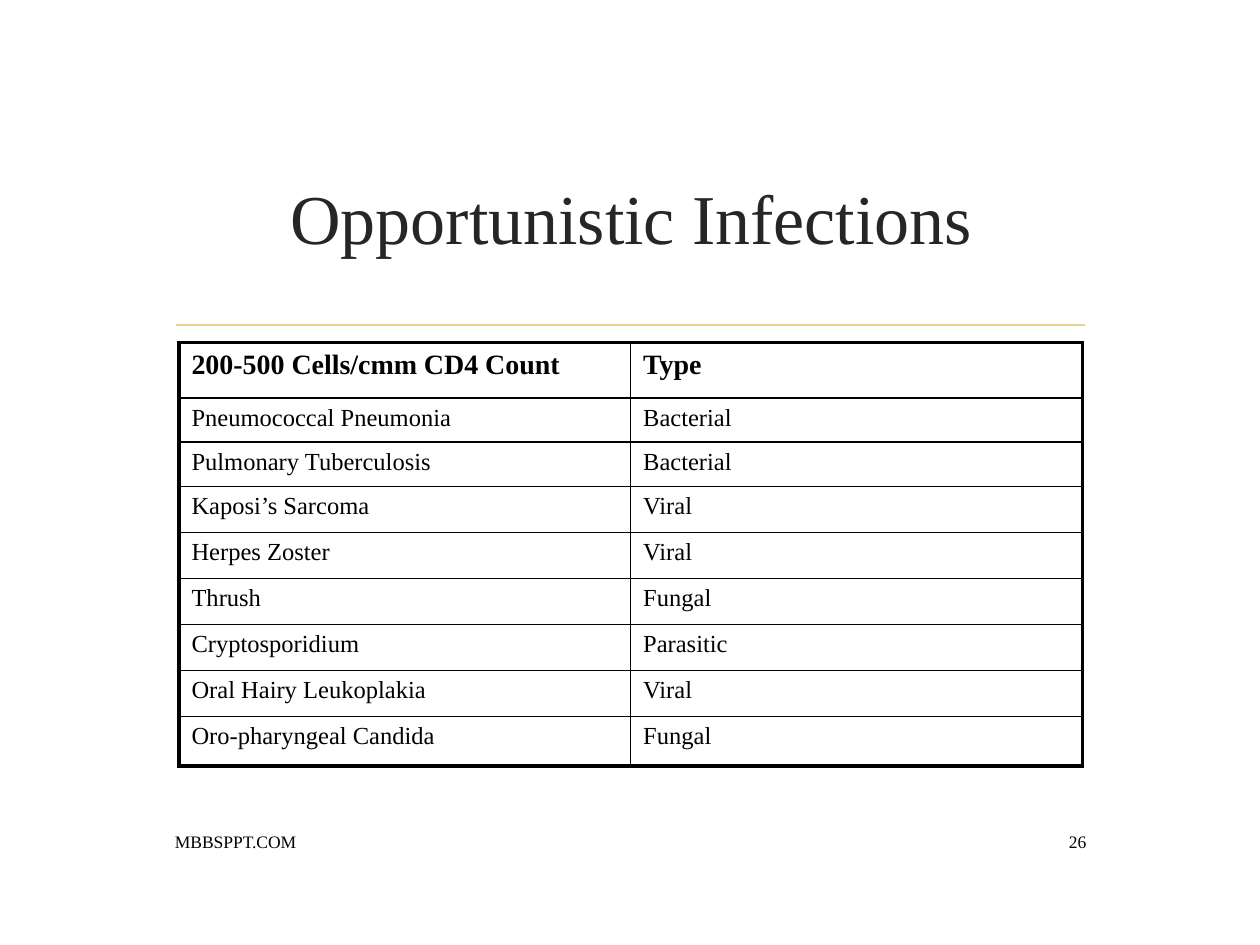
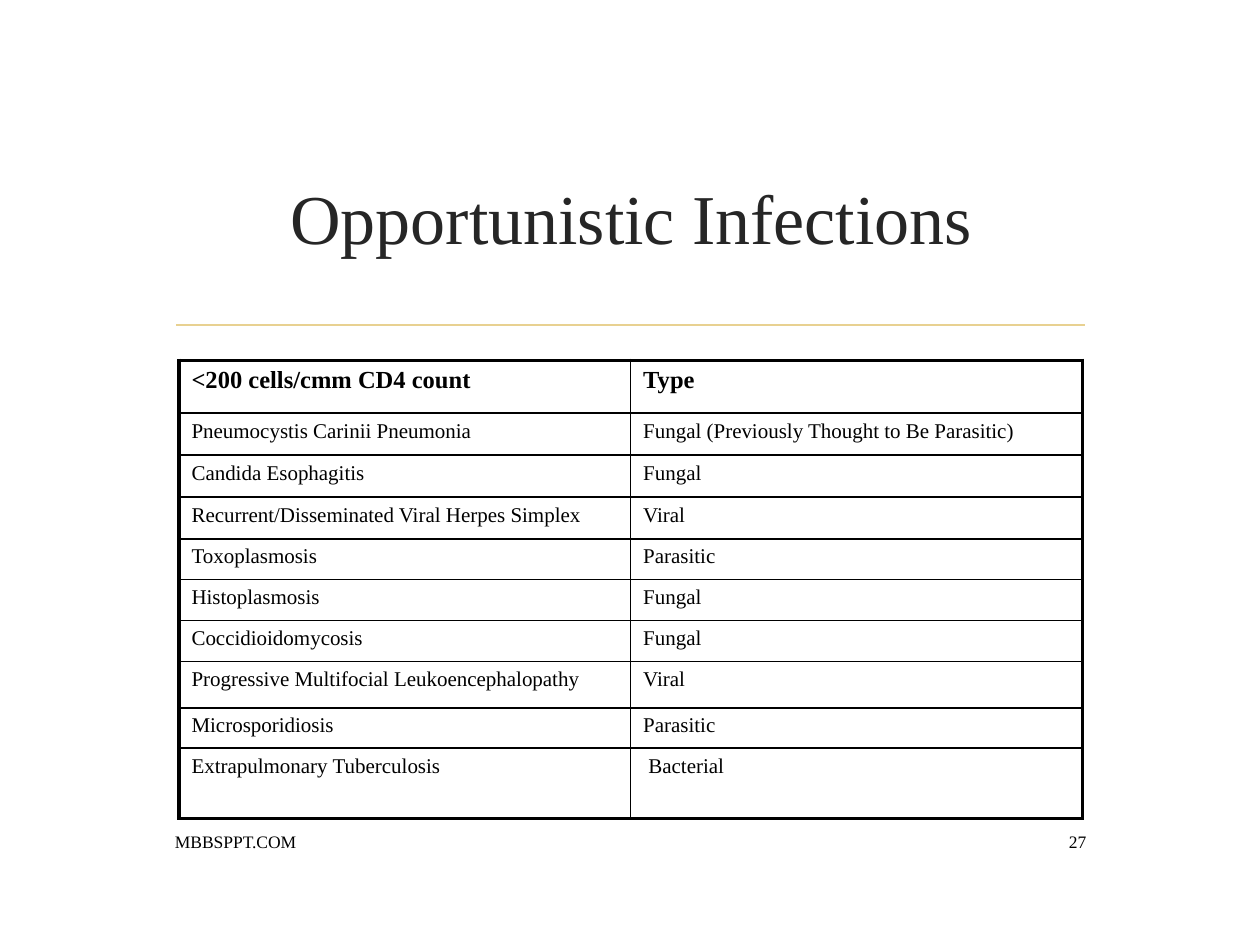
from collections import namedtuple

from lxml import etree
from pptx import Presentation
from pptx.dml.color import RGBColor
from pptx.enum.shapes import MSO_CONNECTOR
from pptx.enum.text import MSO_ANCHOR, PP_ALIGN
from pptx.oxml.ns import qn
from pptx.util import Inches, Pt

LEFT, CENTER, RIGHT = PP_ALIGN.LEFT, PP_ALIGN.CENTER, PP_ALIGN.RIGHT
MIDDLE = MSO_ANCHOR.MIDDLE
STRAIGHT = MSO_CONNECTOR.STRAIGHT

COLORS = {"title": "262626", "ink": "000000", "rule": "E8D191"}
FONT = "Times New Roman"
SLIDE_WIDTH, SLIDE_HEIGHT = Inches(10), Inches(7.5)
COLUMN, ROW = SLIDE_WIDTH / 100, SLIDE_HEIGHT / 75
OUTER, INNER = 2.25, 1

# Boxes are measured in columns and rows of the grid.
Box = namedtuple("Box", "left top width height")
TITLE = Box(12.9, 10, 74.4, 14.3)
RULE = Box(14, 25.8, 72.1, 0)
FOOTER = Box(12.9, 65.2, 74.3, 3.1)

TITLE_TEXT = "Opportunistic Infections"
SITE = "MBBSPPT.COM"

MODERATE_COUNT = [
    ("200-500 Cells/cmm CD4 Count", "Type"),
    ("Pneumococcal Pneumonia", "Bacterial"),
    ("Pulmonary Tuberculosis", "Bacterial"),
    ("Kaposi’s Sarcoma", "Viral"),
    ("Herpes Zoster", "Viral"),
    ("Thrush", "Fungal"),
    ("Cryptosporidium", "Parasitic"),
    ("Oral Hairy Leukoplakia", "Viral"),
    ("Oro-pharyngeal Candida", "Fungal"),
]
LOW_COUNT = [
    ("<200 cells/cmm CD4 count", "Type"),
    ("Pneumocystis Carinii Pneumonia", "Fungal (Previously Thought to Be Parasitic)"),
    ("Candida Esophagitis", "Fungal"),
    ("Recurrent/Disseminated Viral Herpes Simplex", "Viral"),
    ("Toxoplasmosis", "Parasitic"),
    ("Histoplasmosis", "Fungal"),
    ("Coccidioidomycosis", "Fungal"),
    ("Progressive Multifocial Leukoencephalopathy", "Viral"),
    ("Microsporidiosis", "Parasitic"),
    ("Extrapulmonary Tuberculosis", " Bacterial"),
]


def to_emu(box):
    return (round(box.left * COLUMN), round(box.top * ROW),
            round(box.width * COLUMN), round(box.height * ROW))


def write(frame, text, size, color="ink", bold=False, align=LEFT):
    paragraph = frame.paragraphs[0]
    paragraph.alignment = align
    run = paragraph.add_run()
    run.text = text
    run.font.name = FONT
    run.font.size = Pt(size)
    run.font.bold = bold
    run.font.color.rgb = RGBColor.from_string(COLORS[color])


def add_text(slide, box, text, size, **style):
    frame = slide.shapes.add_textbox(*to_emu(box)).text_frame
    frame.word_wrap = True
    frame.vertical_anchor = MIDDLE
    write(frame, text, size, **style)


def add_heading(slide):
    """Title with the rule below it."""
    left, top, width, _ = to_emu(RULE)
    rule = slide.shapes.add_connector(STRAIGHT, left, top, left + width, top)
    rule.line.color.rgb = RGBColor.from_string(COLORS["rule"])
    rule.line.width = Pt(1.25)
    etree.SubElement(rule.line._get_or_add_ln().getparent(), qn("a:effectLst"))
    add_text(slide, TITLE, TITLE_TEXT, 40, color="title", align=CENTER)


def add_footer(slide, box, number):
    """Site at the left end of the box, page number at the right end."""
    number_width = 4.3
    add_text(slide, box._replace(width=box.width * 0.75), SITE, 10)
    number_box = box._replace(left=box.left + box.width - number_width, width=number_width)
    add_text(slide, number_box, str(number), 10, align=RIGHT)


def set_borders(cell, **widths):
    """Widths in points for the sides L, R, T and B, in that order."""
    properties = cell._tc.get_or_add_tcPr()
    for position, (side, width) in enumerate(widths.items()):
        line = etree.Element(qn(f"a:ln{side}"), w=str(Pt(width)))
        fill = etree.SubElement(line, qn("a:solidFill"))
        etree.SubElement(fill, qn("a:srgbClr"), val=COLORS["ink"])
        properties.insert(position, line)


def add_infections(slide, box, infections, row_heights, header_size):
    last_row, last_column = len(infections) - 1, len(infections[0]) - 1
    table = slide.shapes.add_table(last_row + 1, last_column + 1, *to_emu(box)).table
    table.first_row = table.horz_banding = False
    for row, height in zip(table.rows, row_heights):
        row.height = round(height * ROW)
    for r, infection in enumerate(infections):
        for c, text in enumerate(infection):
            cell = table.cell(r, c)
            cell.fill.background()
            set_borders(cell,
                        L=OUTER if c == 0 else INNER,
                        R=OUTER if c == last_column else INNER,
                        T=OUTER if r == 0 else INNER,
                        B=OUTER if r == last_row else INNER)
            is_header = r == 0
            write(cell.text_frame, text, header_size if is_header else header_size - 2,
                  bold=is_header)


def add_infections_slide(deck, number, top, infections, row_heights, header_size):
    slide = deck.slides.add_slide(deck.slide_layouts[6])
    add_heading(slide)
    box = Box(14.2, top, 71.7, sum(row_heights))
    add_infections(slide, box, infections, row_heights, header_size)
    add_footer(slide, FOOTER, number)


def main():
    deck = Presentation()
    deck.slide_width, deck.slide_height = SLIDE_WIDTH, SLIDE_HEIGHT
    add_infections_slide(deck, 26, 27.2, MODERATE_COUNT,
                         [4.4] + [3.5] * 2 + [3.65] * 5 + [3.95], header_size=16)
    add_infections_slide(deck, 27, 28.6, LOW_COUNT,
                         [4.2] + [3.33] * 3 + [3.24] * 3 + [3.7, 3.2, 5.6], header_size=14)
    deck.save("out.pptx")


if __name__ == "__main__":
    main()
